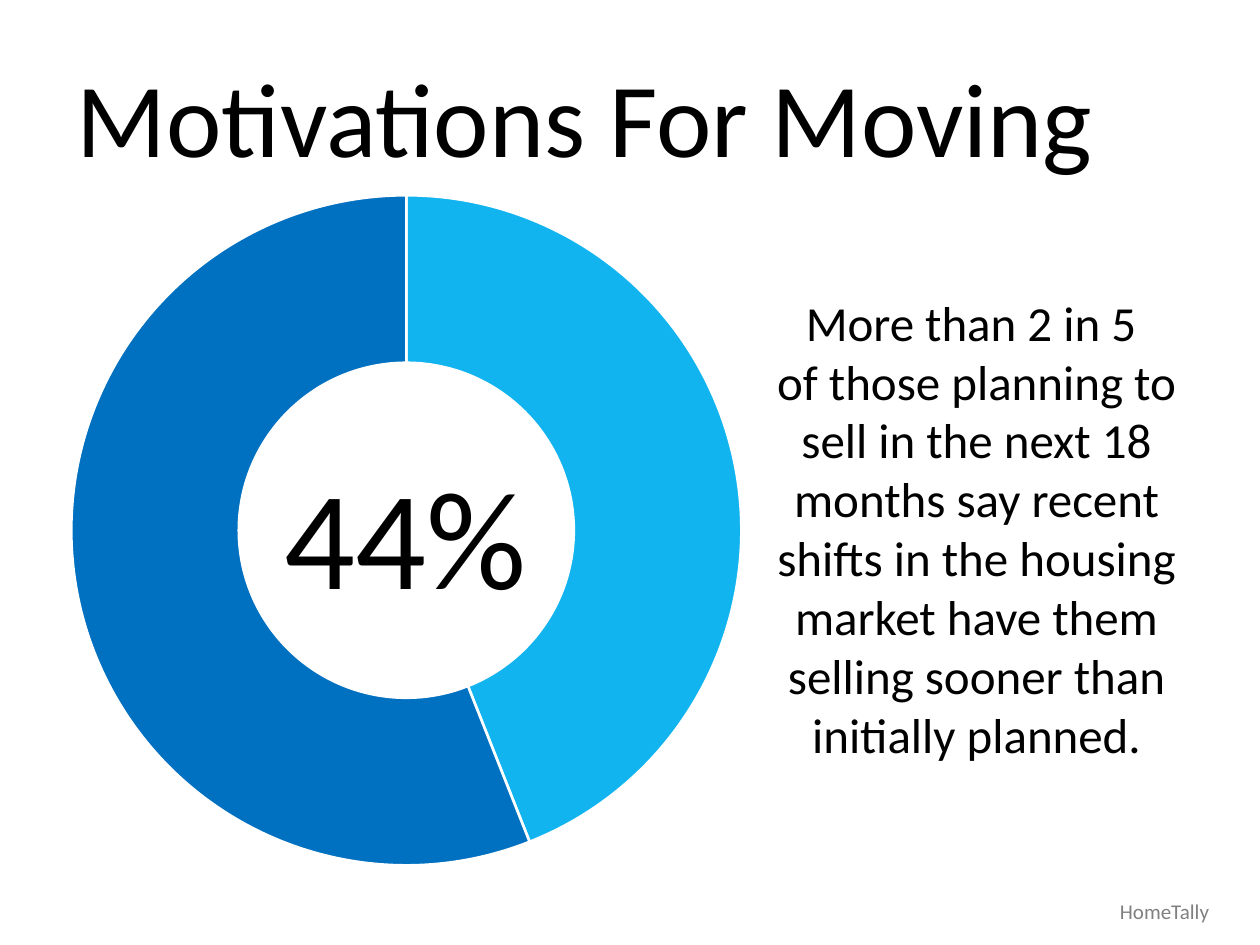
"""Build the slide on motivations for moving, with a doughnut chart."""
from lxml import etree
from pptx import Presentation
from pptx.chart import data
from pptx.dml import color
from pptx.enum import chart as charts, text
from pptx.oxml import ns
from pptx.util import Inches, Pt

COLORS = {"text": "000000", "source": "808080", "share": "12B4F0",
          "rest": "0070C0", "border": "FFFFFF"}
FONT = "Calibri"

presentation = Presentation()
presentation.slide_width, presentation.slide_height = Inches(10), Inches(7.5)
slide = presentation.slides.add_slide(presentation.slide_layouts[6])


def add_text(box, lines, size, tint="text", align=text.PP_ALIGN.LEFT, wrap=True):
    shape = slide.shapes.add_textbox(*[Inches(length) for length in box])
    frame = shape.text_frame
    frame.word_wrap = wrap
    frame.auto_size = text.MSO_AUTO_SIZE.SHAPE_TO_FIT_TEXT
    frame.text = "\n".join(lines)
    for paragraph in frame.paragraphs:
        paragraph.alignment = align
        paragraph.font.name = FONT
        paragraph.font.size = Pt(size)
        paragraph.font.color.rgb = color.RGBColor.from_string(COLORS[tint])


add_text((5.81, 2.27, 3.88, 3.87),
         ["More than 2 in 5 ",
          "of those planning to sell in the next 18 months say recent shifts "
          "in the housing market have them selling sooner than initially planned."],
         28, align=text.PP_ALIGN.CENTER)

chart_data = data.CategoryChartData()
chart_data.categories = ["1", "2"]
chart_data.add_series("Series 1", (44, 56))
chart = slide.shapes.add_chart(
    charts.XL_CHART_TYPE.DOUGHNUT, Inches(0.27), Inches(1.41),
    Inches(5.91), Inches(5.6), chart_data).chart
chart.has_legend = False
chart.has_title = False
chart.font.name = FONT
chart.font.size = Pt(10)
chart.font.color.rgb = color.RGBColor.from_string(COLORS["text"])

plot = chart.plots[0]
plot.vary_by_categories = True
for index, tint in enumerate(("share", "rest")):
    point = plot.series[0].points[index]
    point.format.fill.solid()
    point.format.fill.fore_color.rgb = color.RGBColor.from_string(COLORS[tint])
    point.format.line.color.rgb = color.RGBColor.from_string(COLORS["border"])
    point.format.line.width = Pt(1.5)

plot_area = chart.element.find(".//" + ns.qn("c:plotArea"))
plot_area.find(".//" + ns.qn("c:holeSize")).set("val", "51")
for old_layout in plot_area.findall(ns.qn("c:layout")):
    plot_area.remove(old_layout)
layout = etree.Element(ns.qn("c:layout"))
manual = etree.SubElement(layout, ns.qn("c:manualLayout"))
for tag, value in (("layoutTarget", "inner"), ("xMode", "edge"), ("yMode", "edge"),
                   ("x", "0.05"), ("y", "0.02"), ("w", "0.9"), ("h", "0.96")):
    etree.SubElement(manual, ns.qn("c:" + tag)).set("val", value)
plot_area.insert(0, layout)

add_text((0.51, 0.37, 8.55, 1.11), ["Motivations For Moving"], 60, wrap=False)
add_text((1.93, 3.52, 2.58, 1.45), ["44%"], 80, align=text.PP_ALIGN.CENTER)
add_text((8.79, 7.08, 0.98, 0.3), ["HomeTally"], 12, "source", wrap=False)

presentation.save("out.pptx")
